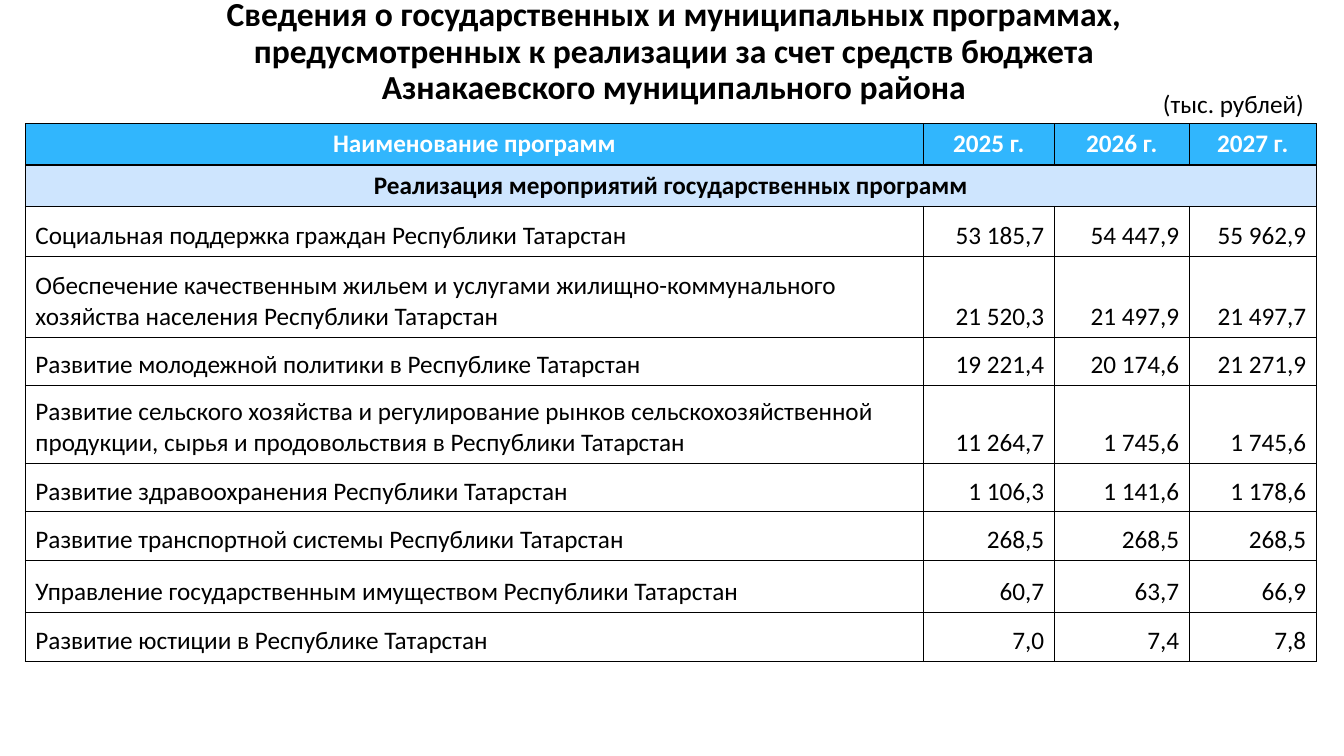
import dataclasses

import lxml.etree
import pptx
import pptx.dml.color
import pptx.enum.text
import pptx.oxml.ns
import pptx.util

Cm = pptx.util.Cm
Pt = pptx.util.Pt
RGB = pptx.dml.color.RGBColor.from_string
ALIGN = pptx.enum.text.PP_ALIGN
ANCHOR = pptx.enum.text.MSO_ANCHOR
AUTO_SIZE = pptx.enum.text.MSO_AUTO_SIZE


@dataclasses.dataclass(frozen=True)
class Theme:
    font: str = "Calibri"
    title_size: int = 24
    body_size: int = 18
    text: str = "000000"
    header_text: str = "FFFFFF"
    header_fill: str = "31B6FD"
    section_fill: str = "CEE5FE"
    body_fill: str = "FFFFFF"
    border: str = "000000"
    border_width: int = 1


THEME = Theme()

TITLE = (
    "Сведения о государственных и муниципальных программах, "
    "предусмотренных к реализации за счет средств бюджета "
    "Азнакаевского муниципального района"
)
UNIT = "(тыс. рублей)"
HEADER = ("Наименование программ", "2025 г.", "2026 г.", "2027 г.")
SECTION = "Реализация мероприятий государственных программ"
PROGRAMS = (
    (1.27, "Социальная поддержка граждан Республики Татарстан",
     "53 185,7", "54 447,9", "55 962,9"),
    (2.03, "Обеспечение качественным жильем и услугами жилищно-коммунального "
     "хозяйства населения Республики Татарстан",
     "21 520,3", "21 497,9", "21 497,7"),
    (1.22, "Развитие молодежной политики в Республике Татарстан",
     "19 221,4", "20 174,6", "21 271,9"),
    (1.96, "Развитие сельского хозяйства и регулирование рынков "
     "сельскохозяйственной продукции, сырья и продовольствия в Республики Татарстан",
     "11 264,7", "1 745,6", "1 745,6"),
    (1.22, "Развитие здравоохранения Республики Татарстан",
     "1 106,3", "1 141,6", "1 178,6"),
    (1.22, "Развитие транспортной системы Республики Татарстан",
     "268,5", "268,5", "268,5"),
    (1.32, "Управление государственным имуществом Республики Татарстан",
     "60,7", "63,7", "66,9"),
    (1.22, "Развитие юстиции в Республике Татарстан",
     "7,0", "7,4", "7,8"),
)
HEAD_HEIGHT = 1.04
COLUMN_WIDTHS = (22.63, 3.3, 3.4, 3.2)


def set_format(obj, values):
    for name, value in values.items():
        setattr(obj, name, value)


def write_text(tf, text, size, color, bold=False, **paragraph_format):
    p = tf.paragraphs[0]
    set_format(p, paragraph_format)
    r = p.add_run()
    r.text = text
    set_format(r.font, {"name": THEME.font, "size": Pt(size), "bold": bold})
    r.font.color.rgb = RGB(color)


def add_borders(cell):
    tc_pr = cell._tc.get_or_add_tcPr()
    qn = pptx.oxml.ns.qn
    for side in ("a:lnL", "a:lnR", "a:lnT", "a:lnB"):
        ln = lxml.etree.SubElement(tc_pr, qn(side), w=str(Pt(THEME.border_width)))
        fill = lxml.etree.SubElement(ln, qn("a:solidFill"))
        lxml.etree.SubElement(fill, qn("a:srgbClr"), val=THEME.border)


def fill_cell(cell, text, fill, anchor, **text_format):
    add_borders(cell)
    cell.fill.solid()
    cell.fill.fore_color.rgb = RGB(fill)
    cell.vertical_anchor = anchor
    if text:
        write_text(cell.text_frame, text, THEME.body_size, **text_format)


def add_label(s, box, text, size, wrap, **text_format):
    sp = s.shapes.add_textbox(*map(Cm, box))
    tf = sp.text_frame
    set_format(tf, {"word_wrap": wrap, "auto_size": AUTO_SIZE.SHAPE_TO_FIT_TEXT})
    write_text(tf, text, size, THEME.text, alignment=ALIGN.CENTER, **text_format)


def add_program_table(s, left, top):
    heights = [HEAD_HEIGHT] * 2 + [height for height, *_ in PROGRAMS]
    sp = s.shapes.add_table(
        len(heights), len(COLUMN_WIDTHS), Cm(left), Cm(top),
        Cm(sum(COLUMN_WIDTHS)), Cm(sum(heights)),
    )
    table = sp.table
    set_format(table, {"first_row": False, "horz_banding": False})
    for column, width in zip(table.columns, COLUMN_WIDTHS):
        column.width = Cm(width)
    for row, height in zip(table.rows, heights):
        row.height = Cm(height)

    head = {"anchor": ANCHOR.TOP, "alignment": ALIGN.CENTER, "bold": True}
    for col, text in enumerate(HEADER):
        fill_cell(table.cell(0, col), text, THEME.header_fill,
                  color=THEME.header_text, **head)
        fill_cell(table.cell(1, col), "" if col else SECTION, THEME.section_fill,
                  color=THEME.text, **head)
    table.cell(1, 0).merge(table.cell(1, len(HEADER) - 1))

    name_format = {"alignment": ALIGN.LEFT, "space_after": Pt(12)}
    value_format = {"alignment": ALIGN.RIGHT}
    for row, (_, *texts) in enumerate(PROGRAMS, start=2):
        for col, text in enumerate(texts):
            fill_cell(table.cell(row, col), text, THEME.body_fill, ANCHOR.BOTTOM,
                      color=THEME.text, **(value_format if col else name_format))


def main():
    prs = pptx.Presentation()
    set_format(prs, {"slide_width": Cm(33.87), "slide_height": Cm(19.05)})
    s = prs.slides.add_slide(prs.slide_layouts[6])
    add_label(s, (29.03, 2.11, 4.11, 1.02), UNIT, THEME.body_size, wrap=False)
    add_label(s, (3.84, -0.18, 26.29, 3.02), TITLE, THEME.title_size, wrap=True,
              bold=True, line_spacing=0.9)
    add_program_table(s, 0.64, 3.12)
    prs.save("out.pptx")


if __name__ == "__main__":
    main()
